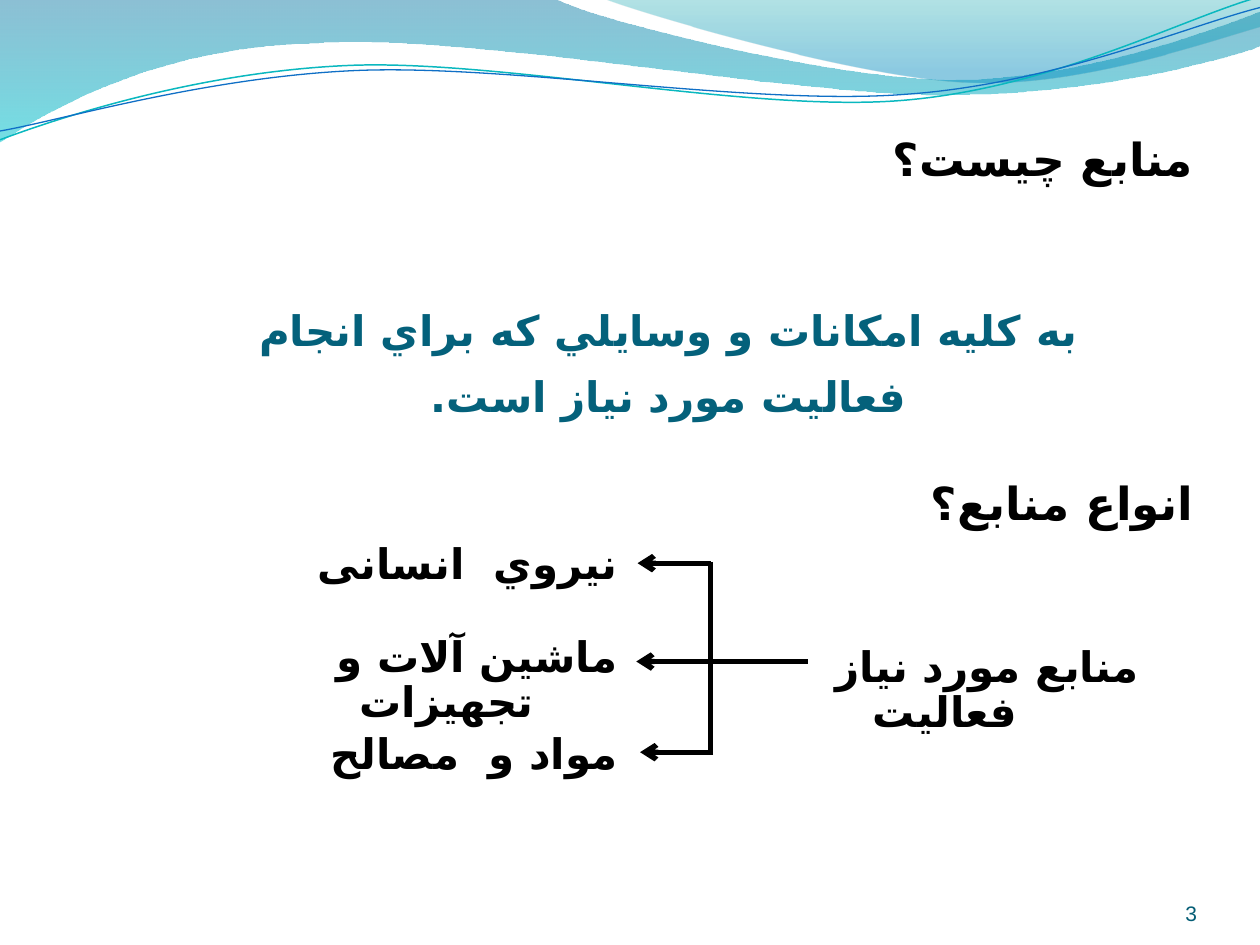
from lxml.etree import SubElement as Sub
from pptx import Presentation
from pptx.dml.color import RGBColor
from pptx.enum.shapes import MSO_CONNECTOR as Link
from pptx.enum.text import MSO_ANCHOR as Anchor, MSO_AUTO_SIZE as Size, PP_ALIGN as Align
from pptx.oxml.ns import qn
from pptx.util import Inches, Pt

BLACK = "000000"
HANG = 0.67


def paint(hue):
    """Turn a hex string into a colour."""
    return RGBColor.from_string(hue)


def write(slide, box, text, size=24, hue=BLACK, bold=True, align=Align.RIGHT,
          hang=0, space=None, grow=False, inset=None, anchor=Anchor.TOP,
          script="DejaVu Sans"):
    """Add a right-to-left text box."""
    frame = slide.shapes.add_textbox(*map(Inches, box)).text_frame
    frame.word_wrap = True
    frame.auto_size = Size.SHAPE_TO_FIT_TEXT if grow else Size.NONE
    frame.vertical_anchor = anchor
    if inset is not None:
        frame.margin_left = frame.margin_right = Inches(inset)
        frame.margin_top = frame.margin_bottom = Inches(inset)
    para = frame.paragraphs[0]
    para.alignment = align
    if space:
        para.line_spacing = space
    props = para._p.get_or_add_pPr()
    props.set("rtl", "1")
    if hang:
        props.set("marL", str(Inches(hang)))
        props.set("indent", str(-Inches(hang)))
    run = para.add_run()
    run.text = text
    font = run.font
    font.size, font.bold, font.name = Pt(size), bold, "Calibri"
    font.color.rgb = paint(hue)
    Sub(run._r.get_or_add_rPr(), qn("a:cs"), typeface=script)


def bend(shape, parts):
    """Turn each three segments that belong to a curve into a cubic."""
    legs = iter(list(shape._element.iter(qn("a:lnTo"))))
    for part in parts:
        first = next(legs)
        if len(part) == 6:
            first.tag = qn("a:cubicBezTo")
            for leg in (next(legs), next(legs)):
                first.append(leg[0])
                leg.getparent().remove(leg)


def trace(slide, start, parts, close):
    """Add a freeform of lines and cubic curves."""
    points = [tuple(map(Inches, part[i:i + 2]))
              for part in parts for i in range(0, len(part), 2)]
    build = slide.shapes.build_freeform(*map(Inches, start))
    build.add_line_segments(points, close=close)
    shape = build.convert_to_shape()
    shape.shadow.inherit = False
    bend(shape, parts)
    return shape


def band(slide, start, parts, stops):
    """Add a wave filled with a see-through gradient."""
    shape = trace(slide, start, parts, True)
    shape.line.fill.background()
    shape.fill.gradient()
    shape.fill.gradient_angle = 270
    for stop, (place, hue, alpha) in zip(shape.fill.gradient_stops, stops):
        stop.position = place
        stop.color.rgb = paint(hue)
    tints = shape._element.spPr.iter(qn("a:srgbClr"))
    for tint, (place, hue, alpha) in zip(list(tints), stops):
        Sub(tint, qn("a:alpha"), val=str(alpha * 1000))


def strand(slide, start, parts, hue, width):
    """Add a thin wavy line."""
    shape = trace(slide, start, parts, False)
    shape.fill.background()
    shape.line.color.rgb = paint(hue)
    shape.line.width = Pt(width)


def waves(slide):
    """Draw the waves along the top edge."""
    band(slide, (0, 0),
         [(4.4, -0.01), (4.76, 0.17, 6.64, 0.63, 7.58, 0.63),
          (8.53, 0.63, 9.58, 0.26, 10, 0.09), (10.01, 0.36),
          (9.83, 0.44, 8.7, 0.76, 7.46, 0.75),
          (6.22, 0.75, 3.82, 0.28, 2.57, 0.34),
          (1.29, 0.36, 0.46, 0.83, -0.01, 1.13)],
         [(0, "0074A1", 45), (1, "00C6CF", 55)])
    band(slide, (4.79, -0.01),
         [(5.09, 0.11, 6.82, 0.62, 7.69, 0.65),
          (8.56, 0.69, 9.61, 0.32, 10, 0.21), (10, 0)],
         [(0, "00A1A9", 30), (0.8, "008BBF", 45)])
    strand(slide, (0, 1.11),
           [(0.48, 0.93, 1.58, 0.57, 2.77, 0.52),
            (3.95, 0.47, 5.93, 0.89, 7.13, 0.8),
            (8.33, 0.71, 9.38, 0.15, 9.98, -0.02)], "0AB8BF", 0.85)
    strand(slide, (0, 1.04),
           [(0.47, 0.96, 1.64, 0.61, 2.83, 0.56),
            (4.03, 0.51, 5.97, 0.84, 7.17, 0.75),
            (8.36, 0.67, 9.41, 0.21, 10, 0.06)], "0F6FC6", 0.75)


def rule(slide, x1, y1, x2, y2, arrow=False):
    """Add a thick line, with an arrowhead if asked."""
    line = slide.shapes.add_connector(Link.STRAIGHT, *map(Inches, (x1, y1, x2, y2)))
    line.line.color.rgb = paint(BLACK)
    line.line.width = Pt(3)
    if arrow:
        Sub(line.line._get_or_add_ln(), qn("a:tailEnd"), type="arrow")
    Sub(line._element.spPr, qn("a:effectLst"))


def bracket(slide, box):
    """Draw the stem, the spine and three arrows."""
    left, top, width, height = box
    spine, mid, reach = left + 0.59, top + 0.79, 0.58
    rule(slide, left + width, mid, spine, mid)
    rule(slide, spine, top, spine, top + height - 0.02)
    for x, y in ((spine, top + 0.01), (spine - 0.01, mid), (spine + 0.02, top + height)):
        rule(slide, x, y, x - reach, y, arrow=True)


def kinds(slide, box):
    """Place the tree of resource types."""
    left, top, width, height = box
    look = {"hang": HANG, "space": 0.9, "grow": True}
    bracket(slide, (left + 3.49, top + 0.2, 1.36, 1.51))
    write(slide, (left + width - 2.83, top + 0.82, 2.83, 0.46),
          "منابع مورد نياز فعاليت", align=Align.CENTER, **look)
    items = (("نيروي  انسانی", 0, 2.83), ("ماشين آلات و  تجهيزات", 0.74, 3.44),
             ("مواد و  مصالح", 1.51, 2.83))
    for text, drop, wide in items:
        write(slide, (left + 3.44 - wide, top + drop, wide, 0.46), text, **look)


def main():
    """Build and save the slide."""
    deck = Presentation()
    deck.slide_width, deck.slide_height = Inches(10), Inches(7.5)
    slide = deck.slides.add_slide(deck.slide_layouts[6])
    waves(slide)
    write(slide, (8.67, 6.95, 0.83, 0.4), "3", size=12, hue="045D75",
          bold=False, inset=0, anchor=Anchor.BOTTOM, script="Arial")
    for text, top in (("منابع چيست؟", 0.99), ("انواع منابع؟", 3.72)):
        write(slide, (5.87, top, 3.7, 0.74), text, size=26, hang=HANG)
    write(slide, (1.62, 2.25, 7.37, 0.63),
          "به كليه امكانات و وسايلي كه براي انجام فعاليت مورد نياز است.",
          hue="04617B", align=Align.CENTER, space=1.3, grow=True)
    kinds(slide, (1.56, 4.26, 7.69, 1.97))
    deck.save("out.pptx")


if __name__ == "__main__":
    main()
